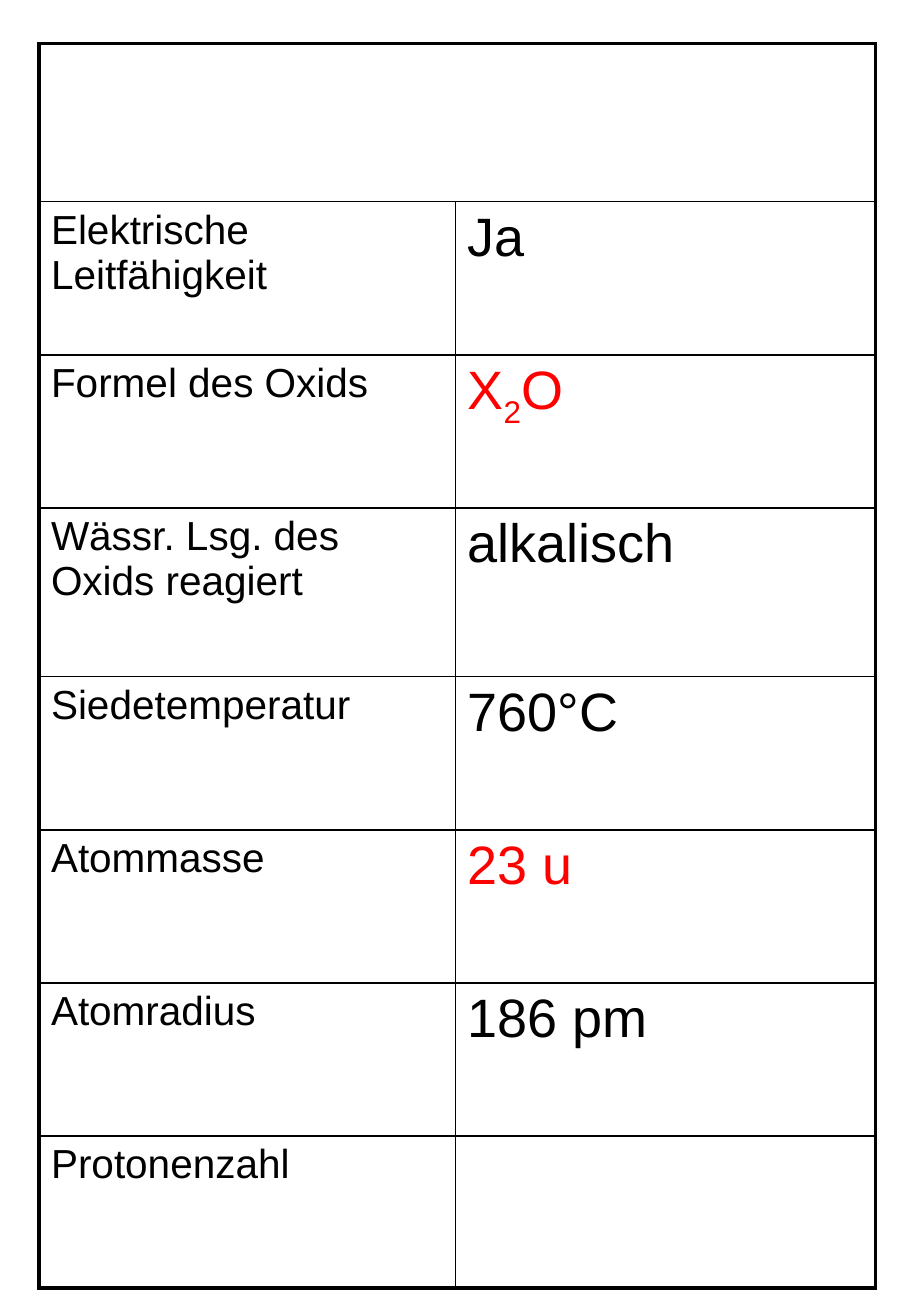
import pptx
import pptx.dml.color
import pptx.oxml
import pptx.oxml.ns
import pptx.util

Inches = pptx.util.Inches
Pt = pptx.util.Pt

BLACK = "000000"
RED = "FF0000"
THIN, THICK = 1, 2.25
COL_WIDTHS = [3.43, 3.46]
ROW_HEIGHTS = [1.3, 1.26, 1.26, 1.39, 1.26, 1.26, 1.26, 1.25]
PROPERTIES = [
    ("Elektrische Leitfähigkeit", ["Ja"], BLACK),
    ("Formel des Oxids", ["X", "2", "O"], RED),
    ("Wässr. Lsg. des Oxids reagiert", ["alkalisch"], BLACK),
    ("Siedetemperatur", ["760°C"], BLACK),
    ("Atommasse", ["23 u"], RED),
    ("Atomradius", ["186 pm"], BLACK),
    ("Protonenzahl", [], BLACK),
]


def rgb(color):
    """Return the colour for a hex string."""
    return pptx.dml.color.RGBColor.from_string(color)


def add_text(p, text, size=24, color=BLACK, font="Arial", baseline=0):
    """Add a formatted run to a paragraph."""
    r = p.add_run()
    r.text = text
    r.font.size = Pt(size)
    r.font.name = font
    r.font.color.rgb = rgb(color)
    if baseline:
        r.font._element.set("baseline", str(baseline * 1000))


def set_border(cell, side, width, color=BLACK):
    """Draw one side (L, R, T or B) of a cell."""
    ns = pptx.oxml.ns.nsdecls("a")
    cell._tc.get_or_add_tcPr().append(pptx.oxml.parse_xml(
        f'<a:ln{side} {ns} w="{int(Pt(width))}"><a:solidFill>'
        f'<a:srgbClr val="{color}"/></a:solidFill></a:ln{side}>'))


def format_cells(table):
    """Give the table a thick frame, thin inner lines and clear cells."""
    last_row, last_col = len(table.rows) - 1, len(table.columns) - 1
    for i, row in enumerate(table.rows):
        for j, cell in enumerate(row.cells):
            header = i == 0
            outer = {"L": j == 0 or header, "R": j == last_col or header,
                     "T": header, "B": i == last_row}
            for side, thick in outer.items():
                set_border(cell, side, THICK if thick else THIN)
            cell.fill.background()


def add_property_table(s, left, top):
    """Place the element property table with its corner at left, top."""
    table = s.shapes.add_table(
        len(ROW_HEIGHTS), len(COL_WIDTHS), Inches(left), Inches(top),
        Inches(sum(COL_WIDTHS)), Inches(sum(ROW_HEIGHTS))).table
    table.first_row = table.horz_banding = False
    for column, width in zip(table.columns, COL_WIDTHS):
        column.width = Inches(width)
    for row, height in zip(table.rows, ROW_HEIGHTS):
        row.height = Inches(height)
    table.cell(0, 0).merge(table.cell(0, 1))
    format_cells(table)
    for i, (label, value, color) in enumerate(PROPERTIES, start=1):
        add_text(table.cell(i, 0).text_frame.paragraphs[0], label)
        p = table.cell(i, 1).text_frame.paragraphs[0]
        for k, part in enumerate(value):
            add_text(p, part, size=32, color=color, baseline=-25 if k == 1 else 0)


def main():
    """Build the slide and save it."""
    prs = pptx.Presentation()
    prs.slide_width, prs.slide_height = Inches(7.5), Inches(10.83)
    s = prs.slides.add_slide(prs.slide_layouts[6])
    add_property_table(s, 0.32, 0.36)
    prs.save("out.pptx")


if __name__ == "__main__":
    main()
